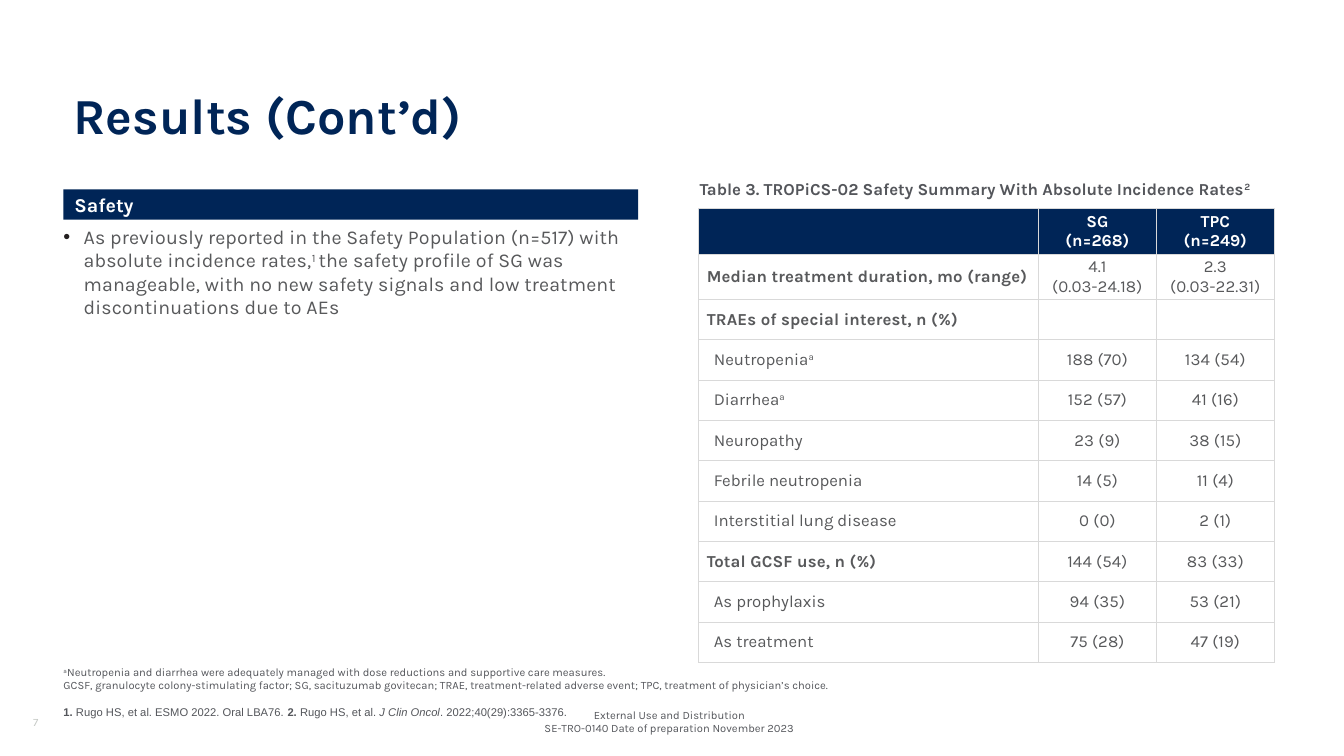
from dataclasses import dataclass, replace
from typing import NamedTuple

from lxml.etree import SubElement
from pptx import Presentation
from pptx.dml.color import RGBColor
from pptx.enum.shapes import MSO_SHAPE
from pptx.enum.text import MSO_ANCHOR, PP_ALIGN
from pptx.oxml.ns import qn
from pptx.util import Inches, Pt

COLORS = {
    "navy": "002557",
    "white": "FFFFFF",
    "body": "58595B",
    "gray": "54565B",
    "page": "C6CAC6",
    "bullet": "231F20",
    "border": "D9D9D9",
}


@dataclass(frozen=True)
class Style:
    size: float
    color: str
    bold: bool = False
    italic: bool = False
    font: str = "Karla"
    spacing: int = 0  # hundredths of a point
    baseline: int = 0  # thousandths of a percent


class Piece(NamedTuple):
    text: str
    style: Style


class Box(NamedTuple):
    left: float
    top: float
    width: float
    height: float


class SafetyRow(NamedTuple):
    label: str
    sg: str = ""
    tpc: str = ""
    heading: bool = False
    note: str = ""


HEADER = Style(12, "white", bold=True)
LABEL = Style(12, "body")
HEADING = Style(12, "body", bold=True, spacing=10)
VALUE = Style(12, "body", spacing=10)
CAPTION = Style(12, "gray", bold=True)
BODY = Style(14, "body", spacing=8)
NOTE = Style(8, "gray")
REFERENCE = Style(8, "gray", font="Arial")
REFERENCE_NUMBER = replace(REFERENCE, bold=True)

SAFETY_ROWS = [
    SafetyRow("Median treatment duration, mo (range)",
              "4.1\n(0.03-24.18)", "2.3\n(0.03-22.31)", heading=True),
    SafetyRow("TRAEs of special interest, n (%)", heading=True),
    SafetyRow("Neutropenia", "188 (70)", "134 (54)", note="a"),
    SafetyRow("Diarrhea", "152 (57)", "41 (16)", note="a"),
    SafetyRow("Neuropathy", "23 (9)", "38 (15)"),
    SafetyRow("Febrile neutropenia", "14 (5)", "11 (4)"),
    SafetyRow("Interstitial lung disease", "0 (0)", "2 (1)"),
    SafetyRow("Total GCSF use, n (%)", "144 (54)", "83 (33)", heading=True),
    SafetyRow("As prophylaxis", "94 (35)", "53 (21)"),
    SafetyRow("As treatment", "75 (28)", "47 (19)"),
]
COLUMN_WIDTHS = [3.37, 1.17, 1.17]
ROW_HEIGHTS = [0.45] * 2 + [0.4] * 9


def format_run(run, style: Style) -> None:
    font = run.font
    font.size, font.name = Pt(style.size), style.font
    font.bold, font.italic = style.bold, style.italic
    font.color.rgb = RGBColor.from_string(COLORS[style.color])
    properties = run._r.get_or_add_rPr()
    if style.spacing:
        properties.set("spc", str(style.spacing))
    if style.baseline:
        properties.set("baseline", str(style.baseline))


def write_text(text_frame, text: str, style: Style, align=PP_ALIGN.LEFT) -> None:
    text_frame.text = text
    for paragraph in text_frame.paragraphs:
        paragraph.alignment = align
        for run in paragraph.runs:
            format_run(run, style)


def add_pieces(paragraph, pieces: list[Piece]) -> None:
    for piece in pieces:
        run = paragraph.add_run()
        run.text = piece.text
        format_run(run, piece.style)


def raised(text: str, style: Style) -> Piece:
    return Piece(text, replace(style, baseline=30000))


def indent(paragraph, left: float, first: float = 0) -> None:
    properties = paragraph._p.get_or_add_pPr()
    properties.set("marL", str(Inches(left)))
    properties.set("indent", str(Inches(first)))


def add_bullet(paragraph) -> None:
    properties = paragraph._p.get_or_add_pPr()
    color = SubElement(properties, qn("a:buClr"))
    SubElement(color, qn("a:srgbClr"), val=COLORS["bullet"])
    SubElement(properties, qn("a:buFont"), typeface="Arial")
    SubElement(properties, qn("a:buChar"), char="•")


def add_text_frame(slide, box: Box, anchor=MSO_ANCHOR.MIDDLE, inset: bool = False):
    """Add a wrapping text box, with the default margins if inset."""
    text_frame = slide.shapes.add_textbox(*map(Inches, box)).text_frame
    text_frame.word_wrap = True
    text_frame.vertical_anchor = anchor
    if not inset:
        text_frame.margin_left = text_frame.margin_right = 0
        text_frame.margin_top = text_frame.margin_bottom = 0
    return text_frame


def style_cell(cell, fill: str | None) -> None:
    properties = cell._tc.get_or_add_tcPr()
    for side in ("lnL", "lnR", "lnT", "lnB"):
        line = SubElement(properties, qn(f"a:{side}"), w=str(Pt(0.5)))
        SubElement(SubElement(line, qn("a:solidFill")), qn("a:srgbClr"), val=COLORS["border"])
    cell.margin_left = cell.margin_right = Inches(0.05)
    cell.margin_top = cell.margin_bottom = Inches(0.02)
    cell.vertical_anchor = MSO_ANCHOR.MIDDLE
    if fill:
        cell.fill.solid()
        cell.fill.fore_color.rgb = RGBColor.from_string(COLORS[fill])
    else:
        cell.fill.background()


def add_safety_table(slide) -> None:
    table = slide.shapes.add_table(
        len(ROW_HEIGHTS), len(COLUMN_WIDTHS),
        Inches(6.93), Inches(2.07), Inches(5.7), Inches(4.5)).table
    for column, width in zip(table.columns, COLUMN_WIDTHS):
        column.width = Inches(width)
    for row, height in zip(table.rows, ROW_HEIGHTS):
        row.height = Inches(height)
    for cell in table.iter_cells():
        style_cell(cell, None)
    for column, text in enumerate(["", "SG\v(n=268)", "TPC\v(n=249)"]):
        style_cell(table.cell(0, column), "navy")
        write_text(table.cell(0, column).text_frame, text, HEADER, PP_ALIGN.CENTER)
    for index, row in enumerate(SAFETY_ROWS, start=1):
        label_frame = table.cell(index, 0).text_frame
        write_text(label_frame, row.label, HEADING if row.heading else LABEL)
        label = label_frame.paragraphs[0]
        indent(label, 0.03 if row.heading else 0.1)
        if row.note:
            add_pieces(label, [raised(row.note, LABEL)])
        for column, value in enumerate([row.sg, row.tpc], start=1):
            write_text(table.cell(index, column).text_frame, value, VALUE, PP_ALIGN.CENTER)


def add_safety_text(slide) -> None:
    bar = slide.shapes.add_shape(
        MSO_SHAPE.RECTANGLE, Inches(0.63), Inches(1.88), Inches(5.7), Inches(0.3))
    bar.shadow.inherit = False
    bar.fill.solid()
    bar.fill.fore_color.rgb = RGBColor.from_string(COLORS["navy"])
    bar.line.fill.background()
    bar.text_frame.vertical_anchor = MSO_ANCHOR.MIDDLE
    write_text(bar.text_frame, "Safety", Style(14, "white", bold=True))
    indent(bar.text_frame.paragraphs[0], 0.01)

    finding = add_text_frame(slide, Box(0.63, 2.23, 5.7, 0.94), MSO_ANCHOR.TOP).paragraphs[0]
    indent(finding, 0.2, -0.2)
    add_bullet(finding)
    add_pieces(finding, [
        Piece("As previously reported in the Safety Population (n=517) with "
              "absolute incidence rates,", BODY),
        raised("1 ", BODY),
        Piece("the safety profile of SG was manageable, with no new safety signals "
              "and low treatment discontinuations due to AEs", BODY),
    ])


def add_footnotes(slide) -> None:
    text_frame = add_text_frame(slide, Box(0.63, 6.59, 12, 0.54), MSO_ANCHOR.BOTTOM)
    add_pieces(text_frame.paragraphs[0], [
        raised("a", NOTE),
        Piece("Neutropenia and diarrhea were adequately managed with dose reductions "
              "and supportive care measures.", NOTE),
    ])
    add_pieces(text_frame.add_paragraph(), [
        Piece("GCSF, granulocyte colony-stimulating factor; SG, sacituzumab govitecan; "
              "TRAE, treatment-related adverse event; TPC, treatment of physician’s choice.", NOTE),
    ])
    references = text_frame.add_paragraph()
    references.space_before = Pt(9.4)
    add_pieces(references, [
        Piece("1. ", REFERENCE_NUMBER),
        Piece("Rugo HS, et al. ESMO 2022. Oral LBA76. ", REFERENCE),
        Piece("2. ", REFERENCE_NUMBER),
        Piece("Rugo HS, et al. ", REFERENCE),
        Piece("J Clin Oncol", replace(REFERENCE, italic=True)),
        Piece(". 2022;40(29):3365-3376.", REFERENCE),
    ])


def main() -> None:
    presentation = Presentation()
    presentation.slide_width, presentation.slide_height = Inches(13.33), Inches(7.5)
    slide = presentation.slides.add_slide(presentation.slide_layouts[6])

    write_text(add_text_frame(slide, Box(5.14, 7, 3, 0.32), inset=True),
               "External Use and Distribution\nSE-TRO-0140 Date of preparation November 2023",
               NOTE, PP_ALIGN.CENTER)
    write_text(add_text_frame(slide, Box(0.23, 7, 3, 0.32), inset=True), "7", Style(8, "page"))
    title = add_text_frame(slide, Box(0.63, 0.4, 12, 1.08), MSO_ANCHOR.BOTTOM, inset=True)
    write_text(title, "Results (Cont’d)", Style(36, "navy", bold=True))
    title.paragraphs[0].line_spacing = 0.8

    add_safety_text(slide)
    caption = add_text_frame(slide, Box(6.93, 1.77, 5.7, 0.2))
    write_text(caption, "Table 3. TROPiCS-02 Safety Summary With Absolute Incidence Rates", CAPTION)
    indent(caption.paragraphs[0], 0.01)
    add_pieces(caption.paragraphs[0], [raised("2", CAPTION)])
    add_safety_table(slide)
    add_footnotes(slide)
    presentation.save("out.pptx")


if __name__ == "__main__":
    main()
